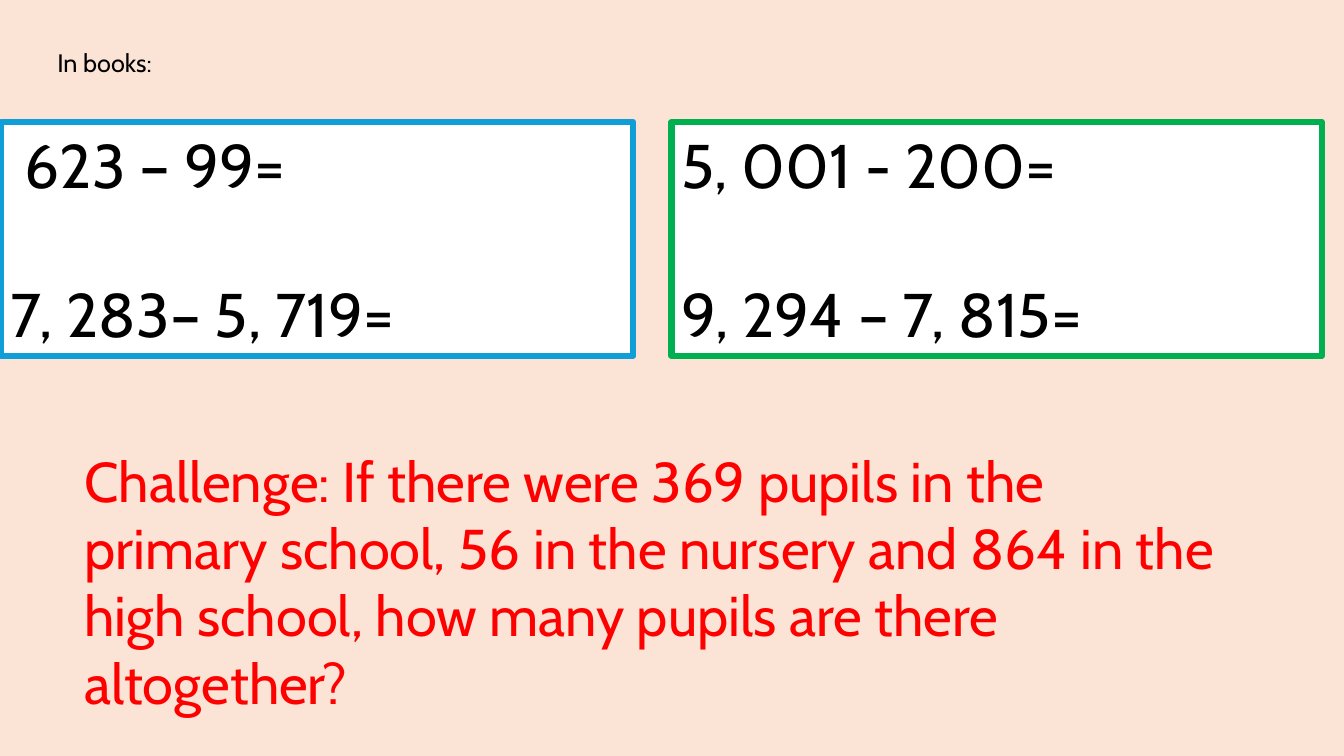
from pptx import Presentation
from pptx.dml.color import RGBColor
from pptx.enum.shapes import MSO_SHAPE
from pptx.enum.text import MSO_ANCHOR, PP_ALIGN
from pptx.util import Inches, Pt

THEME = {
    "font": "Cabin",
    "background": "FBE3D6",
    "panel": "FFFFFF",
    "text": "000000",
    "challenge": "FF0000",
    "blue": "0F9ED5",
    "green": "00B050",
    "border": 4.5,
    "label_size": 18,
    "challenge_size": 40,
    "sum_size": 44,
    "sum_gap": 53.5,
}

LABEL = "In books:"
CHALLENGE = (
    "Challenge: If there were 369 pupils in the primary school, "
    "56 in the nursery and 864 in the high school, "
    "how many pupils are there altogether?"
)
# left, width, border colour, sums
PANELS = [
    (0.01, 6.27, "blue", [" 623 – 99=", "7, 283– 5, 719="]),
    (6.66, 6.45, "green", ["5, 001 - 200=", "9, 294 – 7, 815="]),
]
PANEL_TOP, PANEL_HEIGHT = 1.21, 2.32


def color(name):
    return RGBColor.from_string(THEME[name])


def write(sp, lines, size, ink, gap=0):
    """Fill a shape with left-aligned lines, spaced by gap points."""
    tf = sp.text_frame
    tf.word_wrap = True
    tf.vertical_anchor = MSO_ANCHOR.TOP
    tf.text = "\n".join(lines)
    for i, p in enumerate(tf.paragraphs):
        p.alignment = PP_ALIGN.LEFT
        if i:
            p.space_before = Pt(gap)
        for r in p.runs:
            r.font.name = THEME["font"]
            r.font.size = Pt(THEME[size])
            r.font.color.rgb = color(ink)


def add_panel(s, left, width, border, sums):
    sp = s.shapes.add_shape(MSO_SHAPE.RECTANGLE, Inches(left), Inches(PANEL_TOP),
                            Inches(width), Inches(PANEL_HEIGHT))
    sp.shadow.inherit = False
    sp.fill.solid()
    sp.fill.fore_color.rgb = color("panel")
    sp.line.color.rgb = color(border)
    sp.line.width = Pt(THEME["border"])
    write(sp, sums, "sum_size", "text", THEME["sum_gap"])


def add_text(s, box, text, size, ink):
    sp = s.shapes.add_textbox(*map(Inches, box))
    write(sp, [text], size, ink)


def main():
    prs = Presentation()
    prs.slide_width, prs.slide_height = Inches(13.33), Inches(7.5)
    s = prs.slides.add_slide(prs.slide_layouts[6])
    s.background.fill.solid()
    s.background.fill.fore_color.rgb = color("background")

    for panel in PANELS:
        add_panel(s, *panel)
    add_text(s, (0.74, 4.38, 11.64, 2.79), CHALLENGE, "challenge_size", "challenge")
    add_text(s, (0.47, 0.42, 5.43, 0.4), LABEL, "label_size", "text")
    prs.save("out.pptx")


if __name__ == "__main__":
    main()
